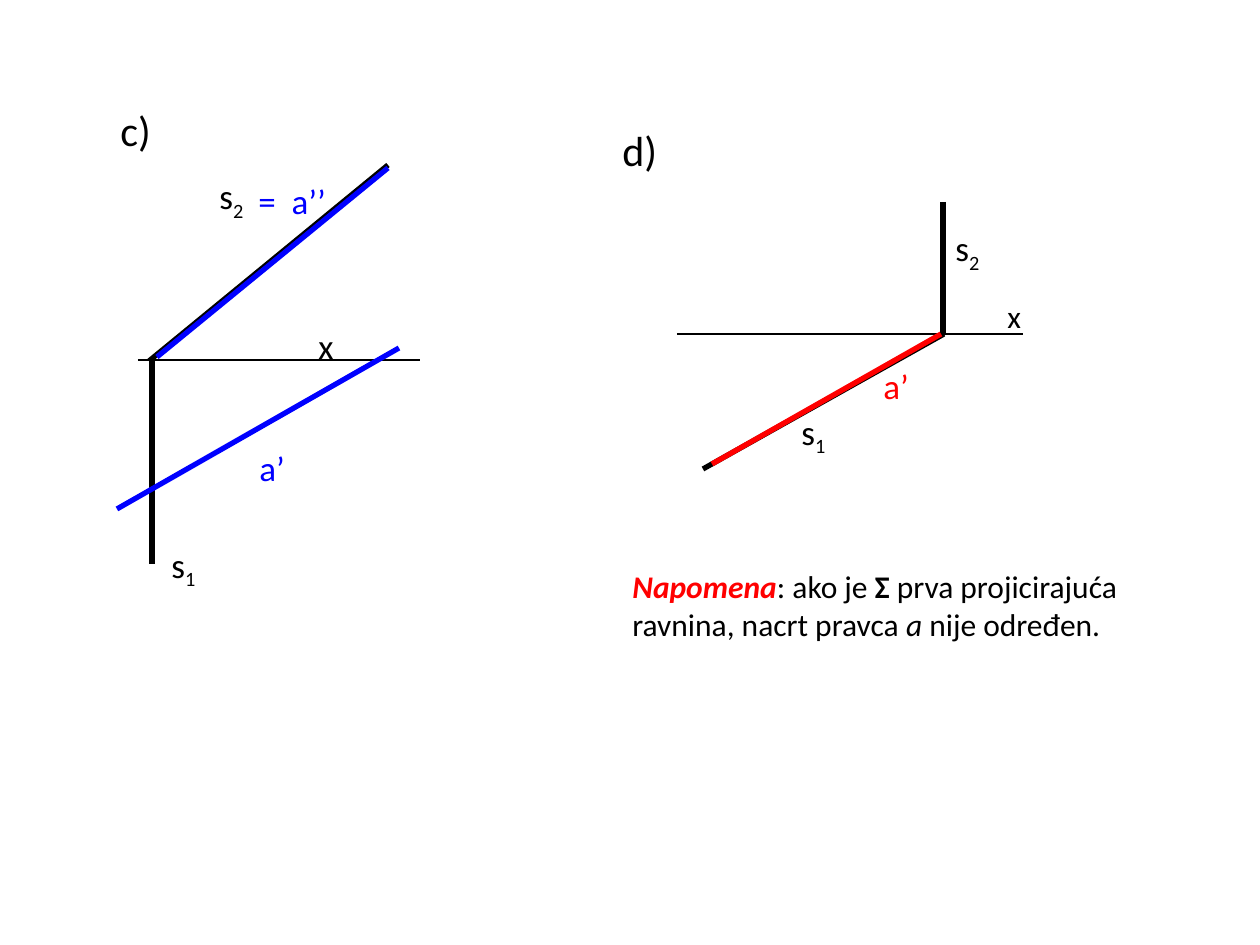
from dataclasses import dataclass

from lxml.etree import SubElement
from pptx import Presentation
from pptx.dml.color import RGBColor
from pptx.enum.shapes import MSO_CONNECTOR as Connector
from pptx.enum.text import MSO_AUTO_SIZE as AutoSize
from pptx.oxml.ns import qn
from pptx.slide import Slide
from pptx.util import Emu, Pt

EMU_PER_PX = 914400 / 126
FONT = "Calibri"
COLORS = {"black": "000000", "blue": "0000FF", "red": "FF0000"}


@dataclass(frozen=True)
class Segment:
    start: tuple[int, int]
    end: tuple[int, int]
    color: str = "black"
    width: float = 3


@dataclass(frozen=True)
class Phrase:
    text: str
    color: str | None = None
    bold: bool | None = None
    italic: bool | None = None
    subscript: bool = False


@dataclass(frozen=True)
class Label:
    box: tuple[int, int, int, int]
    phrases: tuple[Phrase, ...]
    size: int = 20
    color: str = "black"


def px(value: int) -> Emu:
    return Emu(round(value * EMU_PER_PX))


def rgb(name: str) -> RGBColor:
    return RGBColor.from_string(COLORS[name])


def trace(index: str) -> tuple[Phrase, ...]:
    return Phrase("s"), Phrase(index, subscript=True)


def draw_segment(slide: Slide, segment: Segment) -> None:
    line = slide.shapes.add_connector(
        Connector.STRAIGHT, *map(px, segment.start + segment.end)
    )
    line.line.color.rgb = rgb(segment.color)
    line.line.width = Pt(segment.width)
    SubElement(line._element.spPr, qn("a:effectLst"))


def draw_label(slide: Slide, label: Label) -> None:
    frame = slide.shapes.add_textbox(*map(px, label.box)).text_frame
    frame.word_wrap = True
    frame.auto_size = AutoSize.SHAPE_TO_FIT_TEXT
    paragraph = frame.paragraphs[0]
    paragraph.font.name = FONT
    paragraph.font.size = Pt(label.size)
    for phrase in label.phrases:
        run = paragraph.add_run()
        run.text = phrase.text
        run.font.name = FONT
        run.font.size = Pt(label.size)
        run.font.bold = phrase.bold
        run.font.italic = phrase.italic
        run.font.color.rgb = rgb(phrase.color or label.color)
        if phrase.subscript:
            run.font._element.set("baseline", "-25000")


CASE_C = (
    Label((108, 98, 149, 63), (Phrase("c)"),), 24),
    Segment((138, 360), (420, 360), width=0.75),
    Segment((388, 165), (149, 361)),
    Segment((152, 360), (152, 564)),
    Label((159, 537, 84, 54), trace("1")),
    Label((207, 168, 78, 55), trace("2")),
    Segment((399, 348), (117, 509), "blue"),
    Label((247, 440, 93, 54), (Phrase("a’"),), color="blue"),
    Label((306, 318, 48, 55), (Phrase("x"),)),
    Segment((388, 168), (157, 357), "blue"),
    Label((246, 173, 118, 55), (Phrase("=  a’’"),), color="blue"),
)

CASE_D = (
    Label((610, 118, 121, 64), (Phrase("d)"),), 24),
    Segment((677, 334), (1023, 334), width=1),
    Segment((703, 469), (944, 334)),
    Segment((943, 202), (943, 334)),
    Label((789, 404, 69, 54), trace("1")),
    Label((943, 220, 71, 54), trace("2")),
    Label((995, 291, 47, 47), (Phrase("x"),), 18),
    Segment((941, 334), (712, 464), "red"),
    Label((871, 358, 74, 54), (Phrase("a’"),), color="red"),
)

REMARK = Label(
    (620, 561, 576, 89),
    (
        Phrase("Napomena", "red", bold=True, italic=True),
        Phrase(": ako je "),
        Phrase("Σ", bold=True),
        Phrase(" prva projicirajuća ravnina, nacrt pravca "),
        Phrase("a", italic=True),
        Phrase(" nije određen."),
    ),
    18,
)


def main() -> None:
    presentation = Presentation()
    presentation.slide_width = px(1260)
    presentation.slide_height = px(945)
    slide = presentation.slides.add_slide(presentation.slide_layouts[6])
    for element in (*CASE_C, *CASE_D, REMARK):
        if isinstance(element, Segment):
            draw_segment(slide, element)
        else:
            draw_label(slide, element)
    presentation.save("out.pptx")


if __name__ == "__main__":
    main()
